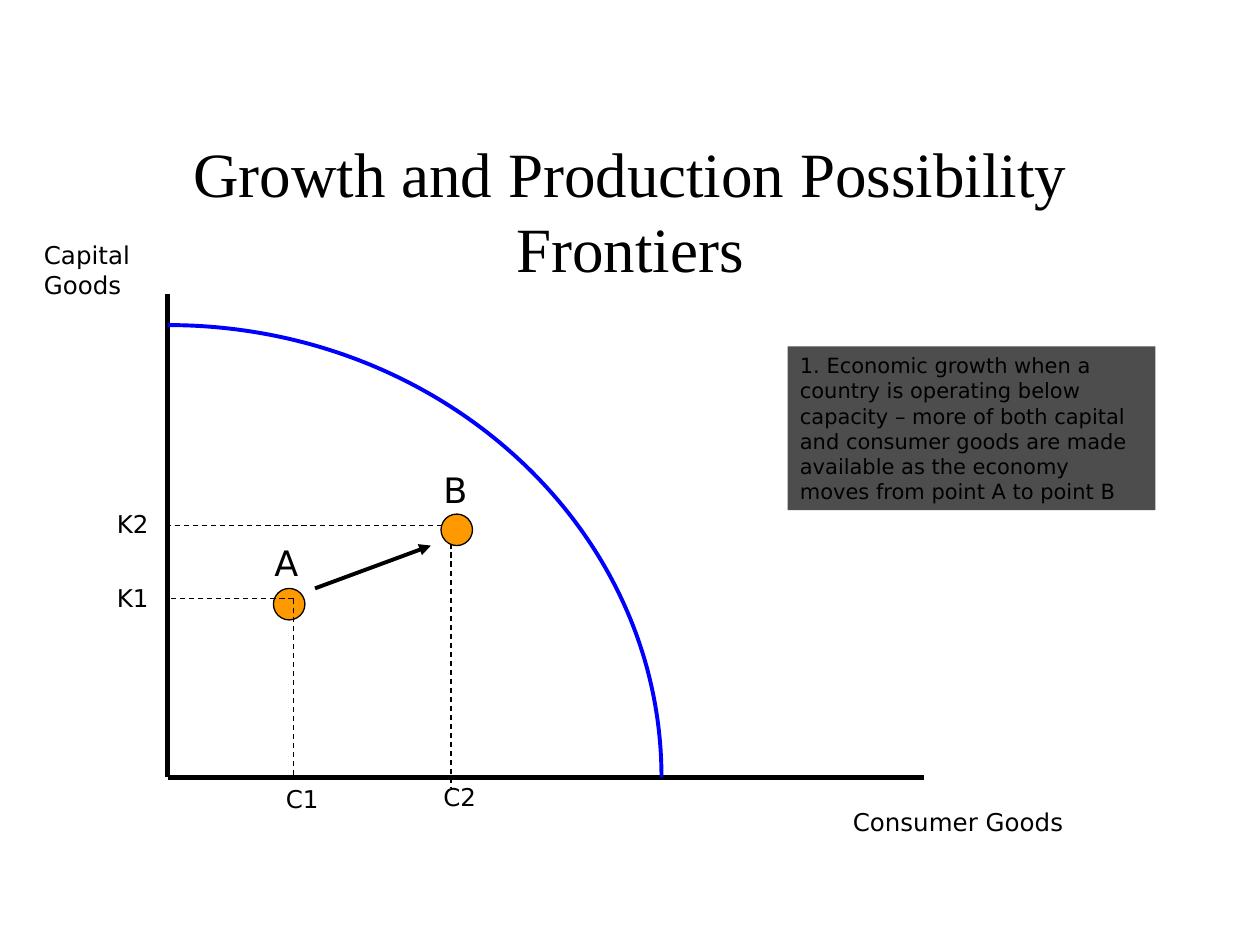
from pptx import Presentation
from pptx.dml.color import RGBColor
from pptx.enum.dml import MSO_LINE
from pptx.enum.shapes import MSO_CONNECTOR, MSO_SHAPE
from pptx.enum.text import MSO_ANCHOR, MSO_AUTO_SIZE, PP_ALIGN
from pptx.oxml.ns import qn
from pptx.util import Inches, Pt
from lxml.etree import SubElement

BLACK, BLUE, ORANGE, GRAY = "000000", "0000FF", "FF9900", "4D4D4D"
ORIGIN_X, ORIGIN_Y = 1.33, 6.17


def color(value):
    return RGBColor.from_string(value)


class DiagramSlide:
    """Draws styled diagram elements on one slide."""

    body_font = "DejaVu Sans"
    title_font = "Times New Roman"

    def __init__(self, slide):
        self.slide = slide
        self.shapes = slide.shapes

    def place(self, shape, left, top, width, height):
        shape.left, shape.top = Inches(left), Inches(top)
        shape.width, shape.height = Inches(width), Inches(height)

    def set_text(self, shape, text, size, font_name, alignment=PP_ALIGN.LEFT):
        paragraph = shape.text_frame.paragraphs[0]
        paragraph.text = text
        paragraph.alignment = alignment
        paragraph.font.size = Pt(size)
        paragraph.font.name = font_name
        paragraph.font.color.rgb = color(BLACK)

    def title(self, text, *box):
        title = self.shapes.title
        self.place(title, *box)
        self.set_text(title, text, 36, self.title_font, PP_ALIGN.CENTER)
        title.text_frame.auto_size = MSO_AUTO_SIZE.NONE
        title.text_frame.vertical_anchor = MSO_ANCHOR.MIDDLE

    def label(self, text, left, top, width, height=0.33, size=14, wrap=False):
        box = self.shapes.add_textbox(Inches(left), Inches(top), Inches(width), Inches(height))
        box.text_frame.word_wrap = wrap
        self.set_text(box, text, size, self.body_font)

    def line(self, start, end, width, dashed=False, arrow=False):
        connector = self.shapes.add_connector(
            MSO_CONNECTOR.STRAIGHT, *map(Inches, start + end))
        connector.line.color.rgb = color(BLACK)
        connector.line.width = Pt(width)
        if dashed:
            connector.line.dash_style = MSO_LINE.DASH
        properties = connector._element.spPr
        if arrow:
            SubElement(properties.find(qn("a:ln")), qn("a:tailEnd"), type="triangle")
        SubElement(properties, qn("a:effectLst"))

    def curve(self, start, *bezier_points):
        builder = self.shapes.build_freeform(*map(Inches, start))
        builder.add_line_segments(
            [tuple(map(Inches, point)) for point in bezier_points], close=False)
        shape = builder.convert_to_shape()
        outline = next(shape._element.iter(qn("a:path")))
        bezier = SubElement(outline, qn("a:cubicBezTo"))
        for segment in outline.findall(qn("a:lnTo")):
            bezier.append(segment[0])
            outline.remove(segment)
        shape.shadow.inherit = False
        shape.fill.background()
        shape.line.color.rgb = color(BLUE)
        shape.line.width = Pt(2.25)

    def filled(self, kind, fill, left, top, width, height):
        shape = self.shapes.add_shape(
            kind, Inches(left), Inches(top), Inches(width), Inches(height))
        shape.shadow.inherit = False
        shape.fill.solid()
        shape.fill.fore_color.rgb = color(fill)
        return shape

    def dot(self, left, top):
        circle = self.filled(MSO_SHAPE.OVAL, ORANGE, left, top, 0.25, 0.25)
        circle.line.color.rgb = color(BLACK)
        circle.line.width = Pt(0.75)

    def note(self, text, *box):
        panel = self.filled(MSO_SHAPE.RECTANGLE, GRAY, *box)
        panel.line.fill.background()
        panel.text_frame.word_wrap = True
        panel.text_frame.vertical_anchor = MSO_ANCHOR.TOP
        self.set_text(panel, text, 12, self.body_font)

    def guides(self, x, y, bottom):
        self.line((x, y), (ORIGIN_X, y), 0.75, dashed=True)
        self.line((x, y), (x, bottom), 0.75, dashed=True)


def main():
    presentation = Presentation()
    presentation.slide_width, presentation.slide_height = Inches(10), Inches(7.5)
    diagram = DiagramSlide(presentation.slides.add_slide(presentation.slide_layouts[5]))

    diagram.title("Growth and Production Possibility Frontiers", 0.75, 1.25, 8.5, 0.83)
    diagram.line((ORIGIN_X, 2.33), (ORIGIN_X, ORIGIN_Y), 3)
    diagram.line((ORIGIN_X, ORIGIN_Y), (7.33, ORIGIN_Y), 3)
    diagram.curve((ORIGIN_X, 2.58), (3.5, 2.58), (5.25, 4.19), (5.25, ORIGIN_Y))

    diagram.label("Capital Goods", 0.25, 1.86, 1.3, 0.57, wrap=True)
    diagram.label("Consumer Goods", 6.67, 6.36, 1.87)
    diagram.label("A", 2.08, 4.25, 0.5, 0.43, size=20, wrap=True)
    diagram.label("B", 3.42, 3.67, 0.42, 0.43, size=20, wrap=True)

    diagram.dot(2.17, 4.67)
    diagram.line((2.5, 4.67), (3.42, 4.33), 2.25, arrow=True)
    diagram.note(
        "1. Economic growth when a country is operating below capacity – more of both "
        "capital and consumer goods are made available as the economy moves from "
        "point A to point B", 6.25, 2.75, 2.92, 1.3)
    diagram.guides(2.33, 4.75, ORIGIN_Y)
    diagram.guides(3.58, 4.17, 6.25)
    diagram.dot(3.5, 4.08)

    diagram.label("K1", 0.83, 4.58, 0.46)
    diagram.label("K2", 0.83, 3.99, 0.46)
    diagram.label("C1", 2.17, 6.17, 0.58, wrap=True)
    diagram.label("C2", 3.42, 6.16, 0.46)
    presentation.save("out.pptx")


if __name__ == "__main__":
    main()
